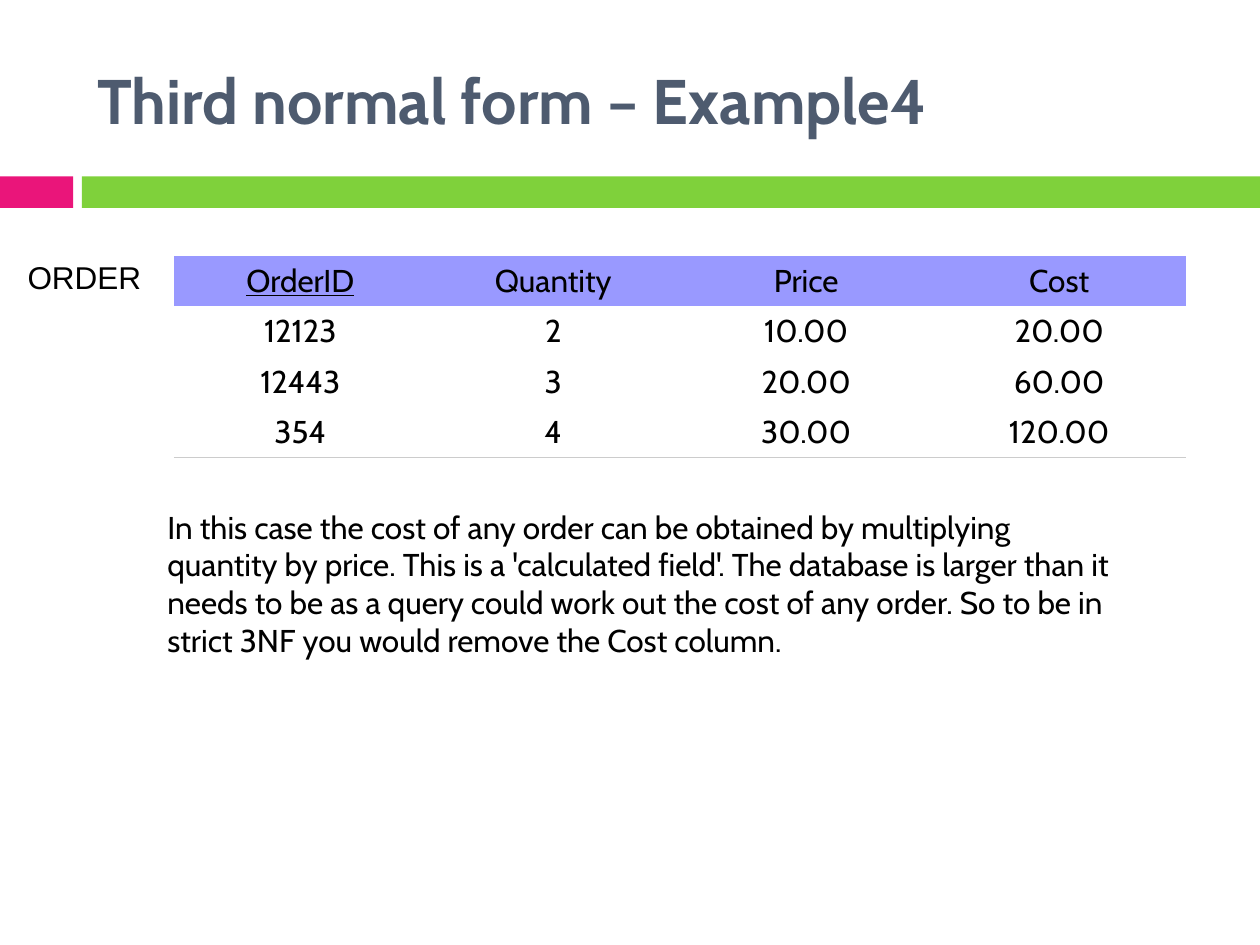
"""Build a slide on third normal form with an order table."""
from lxml import etree
from pptx import Presentation
from pptx.dml.color import RGBColor
from pptx.enum import shapes, text
from pptx.oxml import ns
from pptx.util import Inches, Pt

HUES = {"pink": "EA157A", "green": "7FD13B", "slate": "4E5B6F",
        "ink": "000000", "head": "9999FF", "rule": "CCCCCC"}
PLAIN = {"name": "Cabin", "size": Pt(18)}
ROWS = [("OrderID", "Quantity", "Price", "Cost"),
        ("12123", "2", "10.00", "20.00"),
        ("12443", "3", "20.00", "60.00"),
        ("354", "4", "30.00", "120.00")]
NOTE = ("In this case the cost of any order can be obtained by multiplying "
        "quantity by price. This is a 'calculated field'. The database is "
        "larger than it needs to be as a query could work out the cost of "
        "any order. So to be in strict 3NF you would remove the Cost column.")


def paint(fill, hue):
    """Fill with a named colour."""
    fill.solid()
    fill.fore_color.rgb = RGBColor.from_string(HUES[hue])


def write(frame, words, form, hue="ink", align=text.PP_ALIGN.LEFT):
    """Put one formatted paragraph into a text frame."""
    para = frame.paragraphs[0]
    para.alignment = align
    run = para.add_run()
    run.text = words
    for key, val in form.items():
        setattr(run.font, key, val)
    run.font.color.rgb = RGBColor.from_string(HUES[hue])


def add_bar(slide, left, width, hue):
    """Add one part of the band below the title."""
    bar = slide.shapes.add_shape(shapes.MSO_SHAPE.RECTANGLE, Inches(left),
                                 Inches(1.4), Inches(width), Inches(0.25))
    bar.shadow.inherit = False
    bar.line.fill.background()
    paint(bar.fill, hue)


def add_title(slide, words):
    """Place and fill the title."""
    title = slide.shapes.title
    spots = {"left": 0.67, "top": 0.25, "width": 8.92, "height": 1.08}
    for key, val in spots.items():
        setattr(title, key, Inches(val))
    title.text_frame.vertical_anchor = text.MSO_ANCHOR.MIDDLE
    form = {"name": "Cabin", "size": Pt(36), "bold": True}
    write(title.text_frame, words, form, "slate")


def add_text(slide, box, words, form, wrap):
    """Add a text box."""
    frame = slide.shapes.add_textbox(*map(Inches, box)).text_frame
    frame.word_wrap = wrap
    frame.auto_size = text.MSO_AUTO_SIZE.SHAPE_TO_FIT_TEXT
    write(frame, words, form)


def add_rules(cell):
    """Give a cell a lower rule and no other border."""
    props = cell._tc.get_or_add_tcPr()
    for spot, side in enumerate(("lnL", "lnR", "lnT", "lnB")):
        line = etree.Element(ns.qn(f"a:{side}"), w=str(Pt(0.75)))
        props.insert(spot, line)
        if side == "lnB":
            fill = etree.SubElement(line, ns.qn("a:solidFill"))
            etree.SubElement(fill, ns.qn("a:srgbClr"), val=HUES["rule"])
        else:
            etree.SubElement(line, ns.qn("a:noFill"))


def add_grid(slide, rows):
    """Add the order table."""
    size = len(rows), len(rows[0])
    table = slide.shapes.add_table(*size, Inches(1.38), Inches(2.03),
                                   Inches(8.03), Inches(1.6)).table
    table.first_row = table.horz_banding = False
    for r, row in enumerate(rows):
        for c, words in enumerate(row):
            cell = table.cell(r, c)
            cell.vertical_anchor = text.MSO_ANCHOR.MIDDLE
            if r == 0:
                paint(cell.fill, "head")
            else:
                cell.fill.background()
            add_rules(cell)
            form = {**PLAIN, "underline": r == c == 0}
            write(cell.text_frame, words, form, align=text.PP_ALIGN.CENTER)


def main():
    """Build and save the slide."""
    deck = Presentation()
    deck.slide_width, deck.slide_height = Inches(10), Inches(7.5)
    slide = deck.slides.add_slide(deck.slide_layouts[5])
    add_bar(slide, 0, 0.58, "pink")
    add_bar(slide, 0.65, 9.35, "green")
    add_title(slide, "Third normal form – Example4")
    add_text(slide, (0.12, 2, 1.11, 0.4), "ORDER",
             {**PLAIN, "name": "Arial"}, False)
    add_text(slide, (1.23, 3.98, 7.79, 1.31), NOTE, PLAIN, True)
    add_grid(slide, ROWS)
    deck.save("out.pptx")


if __name__ == "__main__":
    main()
